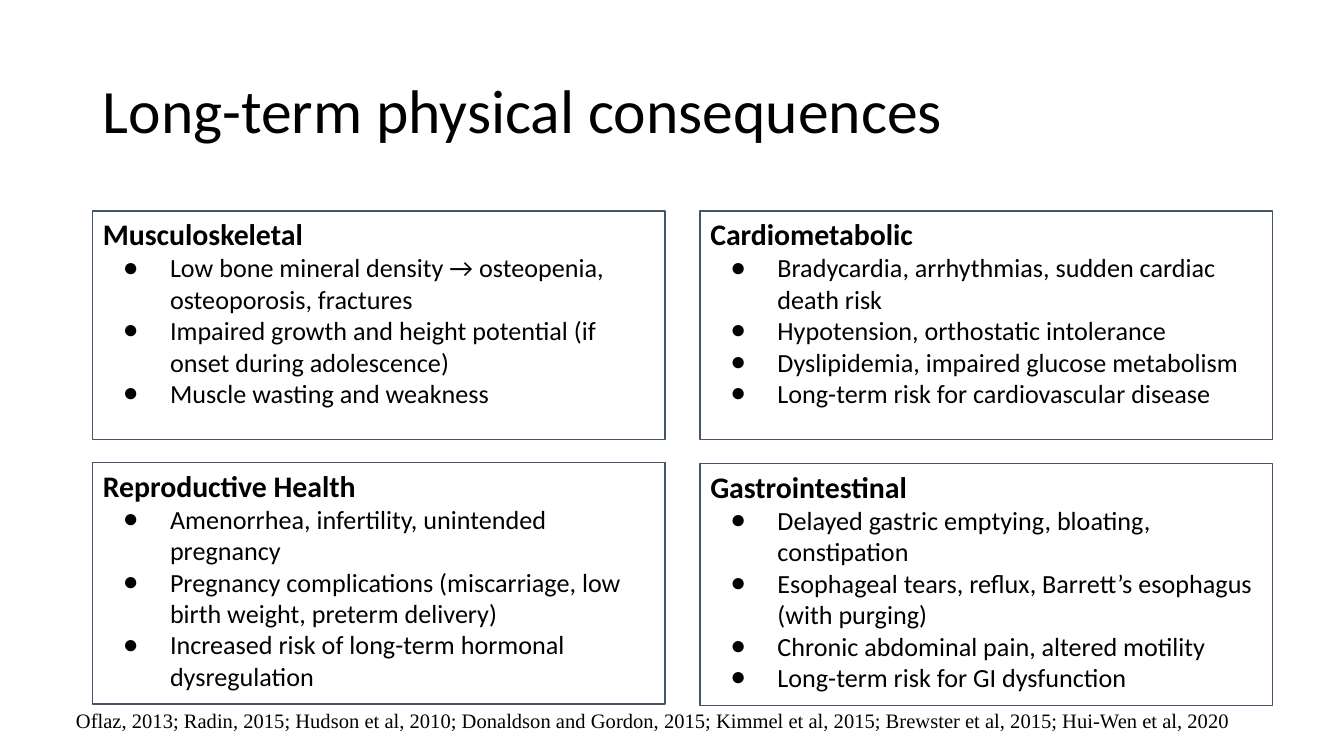
from lxml.etree import SubElement
from pptx import Presentation
from pptx.dml.color import RGBColor
from pptx.enum.shapes import MSO_SHAPE
from pptx.enum.text import MSO_ANCHOR, PP_ALIGN
from pptx.oxml.ns import qn
from pptx.util import Inches, Pt

COLORS = {"text": "000000", "border": "44546A"}
SLIDE_WIDTH = Inches(10)
COLUMNS = (0.69, 5.21)
ROWS = ((1.57, 1.7), (3.44, 1.8))
CARD_WIDTH = 4.26
FRAME = {
    "word_wrap": True,
    "vertical_anchor": MSO_ANCHOR.TOP,
    "margin_left": Pt(5.4),
    "margin_right": Pt(5.4),
    "margin_top": Pt(2.7),
    "margin_bottom": Pt(2.7),
}
TITLE = {"name": "Calibri", "size": Pt(33)}
HEADING = {"name": "Calibri", "size": Pt(16), "bold": True}
BODY = {"name": "Calibri", "size": Pt(14), "bold": False}
CITATION = {"name": "Times New Roman", "size": Pt(11)}

CARDS = [
    ("Musculoskeletal", [
        "Low bone mineral density → osteopenia, osteoporosis, fractures",
        "Impaired growth and height potential (if onset during adolescence)",
        "Muscle wasting and weakness",
    ]),
    ("Cardiometabolic", [
        "Bradycardia, arrhythmias, sudden cardiac death risk",
        "Hypotension, orthostatic intolerance",
        "Dyslipidemia, impaired glucose metabolism",
        "Long-term risk for cardiovascular disease",
    ]),
    ("Reproductive Health", [
        "Amenorrhea, infertility, unintended pregnancy",
        "Pregnancy complications (miscarriage, low birth weight, preterm delivery)",
        "Increased risk of long-term hormonal dysregulation",
    ]),
    ("Gastrointestinal", [
        "Delayed gastric emptying, bloating, constipation",
        "Esophageal tears, reflux, Barrett’s esophagus (with purging)",
        "Chronic abdominal pain, altered motility",
        "Long-term risk for GI dysfunction",
    ]),
]
SOURCES = (
    "Oflaz, 2013; Radin, 2015; Hudson et al, 2010; Donaldson and Gordon, 2015; "
    "Kimmel et al, 2015; Brewster et al, 2015; Hui-Wen et al, 2020"
)


def apply(target, formats):
    """Set each format value on the target."""
    for name, value in formats.items():
        setattr(target, name, value)


def write(p, text, font):
    """Write one left-aligned run into a paragraph."""
    p.alignment = PP_ALIGN.LEFT
    r = p.add_run()
    r.text = text
    apply(r.font, font)
    r.font.color.rgb = RGBColor.from_string(COLORS["text"])


def add_bullet(p):
    """Give a paragraph a hanging round bullet."""
    pPr = p._p.get_or_add_pPr()
    pPr.set("marL", str(Inches(0.5)))
    pPr.set("indent", str(Inches(-0.35)))
    color = SubElement(pPr, qn("a:buClr"))
    SubElement(color, qn("a:srgbClr"), val=COLORS["text"])
    SubElement(pPr, qn("a:buFont"), typeface="Times New Roman")
    SubElement(pPr, qn("a:buChar"), char="●")


def add_text(s, box, text, font, **frame):
    """Add a text box with one paragraph and return the paragraph."""
    tf = s.shapes.add_textbox(*map(Inches, box)).text_frame
    apply(tf, {**FRAME, **frame})
    p = tf.paragraphs[0]
    write(p, text, font)
    return p


def add_card(s, box, heading, items):
    """Add an outlined card with a heading and bullets."""
    sp = s.shapes.add_shape(MSO_SHAPE.RECTANGLE, *map(Inches, box))
    sp.shadow.inherit = False
    sp.fill.background()
    sp.line.color.rgb = RGBColor.from_string(COLORS["border"])
    sp.line.width = Pt(0.75)
    tf = sp.text_frame
    apply(tf, FRAME)
    write(tf.paragraphs[0], heading, HEADING)
    for item in items:
        p = tf.add_paragraph()
        write(p, item, BODY)
        add_bullet(p)


def main():
    """Build and save the slide."""
    prs = Presentation()
    apply(prs, {"slide_width": SLIDE_WIDTH, "slide_height": SLIDE_WIDTH * 9 // 16})
    s = prs.slides.add_slide(prs.slide_layouts[6])
    title = add_text(s, (COLUMNS[0], 0.3, 8.62, 1.09),
                     "Long-term physical consequences", TITLE,
                     vertical_anchor=MSO_ANCHOR.MIDDLE)
    title.line_spacing = 0.9
    for i, (heading, items) in enumerate(CARDS):
        row, column = divmod(i, len(COLUMNS))
        top, height = ROWS[row]
        top += 0.01 * row * column
        add_card(s, (COLUMNS[column], top, CARD_WIDTH, height), heading, items)
    add_text(s, (0.49, 5.23, 9.04, 0.25), SOURCES, CITATION)
    prs.save("out.pptx")


if __name__ == "__main__":
    main()
